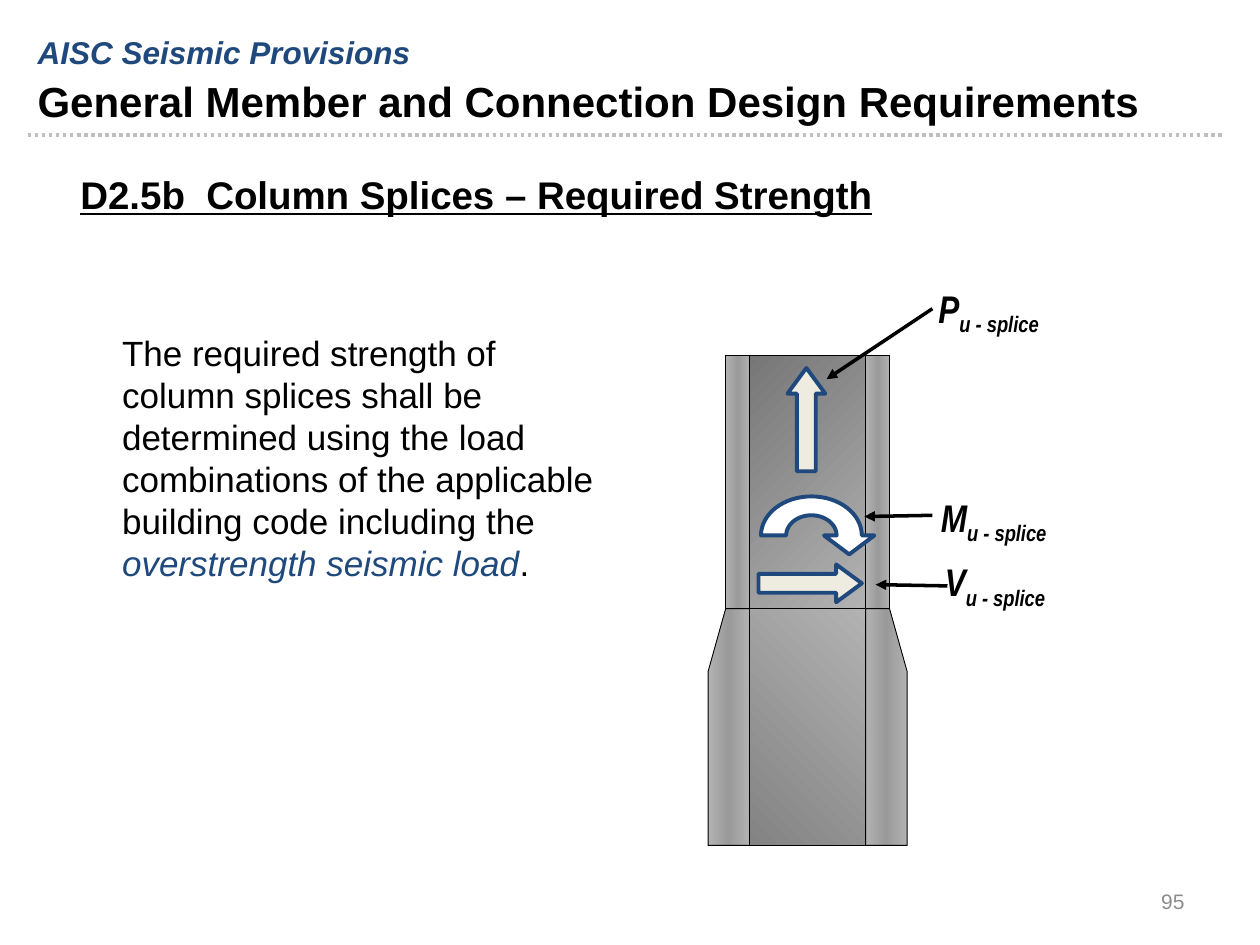
from math import cos, pi, sin

from lxml.etree import SubElement
from pptx import Presentation
from pptx.dml.color import RGBColor
from pptx.enum.dml import MSO_LINE
from pptx.enum.shapes import MSO_CONNECTOR, MSO_SHAPE
from pptx.enum.text import MSO_ANCHOR, PP_ALIGN
from pptx.oxml.ns import qn
from pptx.util import Inches, Pt

COLORS = {
    "text": "000000",
    "accent": "1F497D",
    "rule": "BFBFBF",
    "number": "8C8C8C",
    "cream": "EEECE1",
    "white": "FFFFFF",
    "steel_light": "B2B2B2",
    "steel_mid": "9A9A9A",
    "steel_upper": "777777",
    "steel_lower": "838383",
}
FLANGE = ["steel_light", "steel_mid", "steel_light"]


class SlideBuilder:
    font = "Arial"

    def __init__(self, page):
        self.page = page

    def color(self, name):
        return RGBColor.from_string(COLORS[name])

    def text(self, frame, spans, size, font=None, align=PP_ALIGN.LEFT,
             anchor=MSO_ANCHOR.TOP):
        box = self.page.shapes.add_textbox(*map(Inches, frame))
        box.text_frame.word_wrap = True
        box.text_frame.vertical_anchor = anchor
        para = box.text_frame.paragraphs[0]
        para.alignment = align
        for words, style in spans:
            span = para.add_run()
            span.text = words
            span.font.name = font or self.font
            span.font.size = Pt(size)
            span.font.color.rgb = self.color(style.get("color", "text"))
            span.font.bold = style.get("bold", False)
            span.font.italic = style.get("italic", False)
            span.font.underline = style.get("underline", False)
            if "baseline" in style:
                span.font._element.set("baseline", str(style["baseline"]))

    def outline(self, shape, color, width):
        shape.shadow.inherit = False
        shape.line.color.rgb = self.color(color)
        shape.line.width = Pt(width)

    def steel(self, shape, stops, angle):
        self.outline(shape, "text", 0.5)
        shape.fill.gradient()
        shape.fill.gradient_angle = -angle % 360
        stop_list = shape._element.spPr.find(qn("a:gradFill")).find(qn("a:gsLst"))
        for stop in list(stop_list):
            stop_list.remove(stop)
        for index, name in enumerate(stops):
            position = 100000 * index // (len(stops) - 1)
            stop = SubElement(stop_list, qn("a:gs"), pos=str(position))
            SubElement(stop, qn("a:srgbClr"), val=COLORS[name])

    def plate(self, frame, stops, angle=0):
        shape = self.page.shapes.add_shape(MSO_SHAPE.RECTANGLE, *map(Inches, frame))
        self.steel(shape, stops, angle)

    def polygon(self, points):
        start, *rest = [(Inches(x), Inches(y)) for x, y in points]
        builder = self.page.shapes.build_freeform(*start, scale=1.0)
        builder.add_line_segments(rest, close=True)
        return builder.convert_to_shape()

    def load(self, shape, fill):
        self.outline(shape, "accent", 2.25)
        shape.fill.solid()
        shape.fill.fore_color.rgb = self.color(fill)

    def block_arrow(self, left, top, rotation=0):
        shape = self.page.shapes.add_shape(
            MSO_SHAPE.UP_ARROW, Inches(left), Inches(top), Inches(0.3), Inches(0.82))
        shape.adjustments[0] = 0.5
        shape.adjustments[1] = 0.68
        shape.rotation = rotation
        self.load(shape, "cream")

    def line(self, start, end, color="text", dash=None, arrow=False):
        line = self.page.shapes.add_connector(
            MSO_CONNECTOR.STRAIGHT, *map(Inches, (*start, *end)))
        line.line.color.rgb = self.color(color)
        line.line.width = Pt(2)
        if dash:
            line.line.dash_style = dash
        if arrow:
            SubElement(line.line._get_or_add_ln(), qn("a:tailEnd"), type="triangle")
        SubElement(line._element.spPr, qn("a:effectLst"))

    def label(self, symbol, left, top, width):
        style = {"bold": True, "italic": True}
        spans = [(symbol, style), ("u - splice", {**style, "baseline": -25000})]
        self.text((left, top, width, 0.47), spans, 22, "Arial Narrow")


def half_ellipse(center, radius_x, radius_y, steps=32):
    x, y = center
    return [(x - radius_x * cos(pi * i / steps), y - radius_y * sin(pi * i / steps))
            for i in range(steps + 1)]


def draw_column(slide):
    axis, top, splice, bottom = 6.41, 2.82, 4.83, 6.71
    web, upper, lower, taper = 0.46, 0.65, 0.79, 5.33
    height = splice - top
    slide.plate((axis + web, top, upper - web, height), FLANGE)
    slide.plate((axis - web, top, 2 * web, height),
                ["steel_upper", "steel_light"], 45)
    slide.plate((axis - upper, top, upper - web, height), FLANGE)
    for side in (1, -1):
        outline = [(web, splice), (web, bottom), (lower, bottom),
                   (lower, taper), (upper, splice)]
        flange = slide.polygon([(axis + side * x, y) for x, y in outline])
        slide.steel(flange, FLANGE, 0)
    slide.plate((axis - web, splice, 2 * web, bottom - splice),
                ["steel_lower", "steel_light"], 315)


def draw_loads(slide):
    slide.block_arrow(6.25, 2.92)
    center = (6.44, 4.25)
    head = [(6.94, 4.25), (6.74, 4.4), (6.54, 4.25)]
    inner = half_ellipse(center, 0.2, 0.16)[::-1]
    moment = slide.polygon(half_ellipse(center, 0.4, 0.31) + head + inner)
    slide.load(moment, "white")
    slide.block_arrow(6.28, 4.22, 90)
    for symbol, left, top, width, start, end in (
        ("P", 7.35, 2.21, 1.37, (7.4, 2.45), (6.56, 3.01)),
        ("M", 7.37, 3.87, 1.23, (7.4, 4.09), (6.86, 4.1)),
        ("V", 7.4, 4.38, 1.11, (7.52, 4.65), (6.95, 4.64)),
    ):
        slide.label(symbol, left, top, width)
        slide.line(start, end, arrow=True)


def main():
    deck = Presentation()
    deck.slide_width, deck.slide_height = Inches(10), Inches(7.5)
    slide = SlideBuilder(deck.slides.add_slide(deck.slide_layouts[6]))
    slide.line((0.22, 1.07), (9.72, 1.07), "rule", MSO_LINE.ROUND_DOT)
    slide.text((0.2, 0.55, 8.98, 0.44),
               [("General Member and Connection Design Requirements", {"bold": True})], 24)
    slide.text((0.2, 0.21, 8.98, 0.31),
               [("AISC Seismic Provisions",
                 {"bold": True, "italic": True, "color": "accent"})], 18)
    slide.text((7.17, 6.95, 2.33, 0.4), [("95", {"color": "number"})], 12,
               align=PP_ALIGN.RIGHT, anchor=MSO_ANCHOR.MIDDLE)
    draw_column(slide)
    slide.text((0.87, 2.58, 3.95, 2.12), [
        ("The required strength of column splices shall be determined using the load "
         "combinations of the applicable building code including the ", {}),
        ("overstrength seismic load", {"italic": True, "color": "accent"}),
        (".", {}),
    ], 20)
    draw_loads(slide)
    slide.text((0.54, 1.31, 7.73, 0.47),
               [("D2.5b  Column Splices – Required Strength",
                 {"bold": True, "underline": True})], 22)
    deck.save("out.pptx")


if __name__ == "__main__":
    main()
